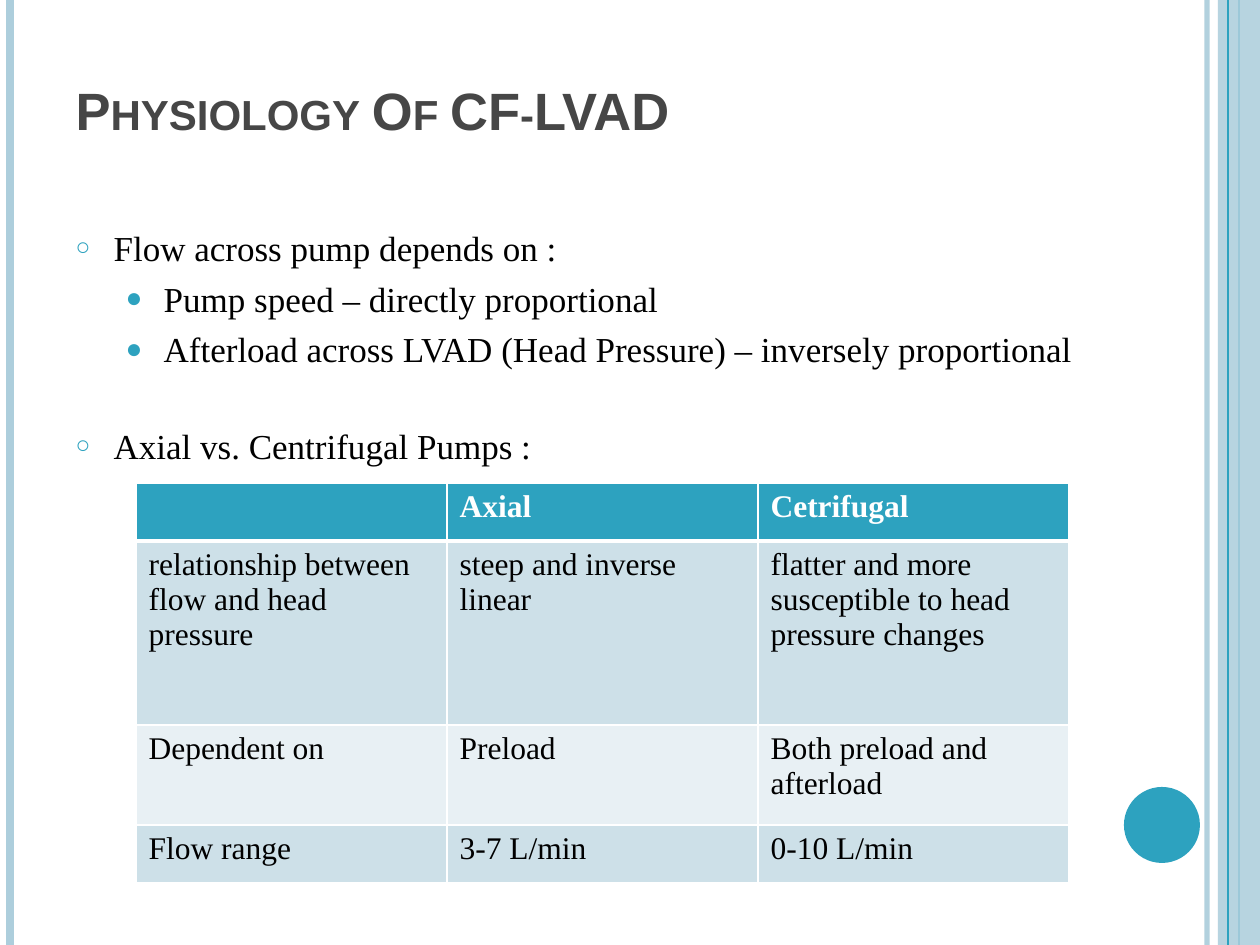
from dataclasses import dataclass
from pptx import Presentation
from pptx.dml.color import RGBColor as RGB
from pptx.enum.shapes import MSO_CONNECTOR as Conn, MSO_SHAPE as Shape
from pptx.enum.text import MSO_ANCHOR as Anchor, MSO_AUTO_SIZE as Fit, PP_ALIGN as Align
from pptx.oxml.ns import qn
from pptx.util import Emu, Pt
from lxml.etree import SubElement as Sub

WIDE, HIGH = 1260, 945


@dataclass(frozen=True)
class Theme:
    teal: str = "2DA2BF"
    pale: str = "ADCEDC"
    band: str = "CDE0E8"
    light: str = "E8F0F4"
    white: str = "FFFFFF"
    ink: str = "000000"
    grey: str = "464646"
    sans: str = "Arial"
    serif: str = "Times New Roman"
    head: int = 30
    text: int = 20
    cell: int = 18


LOOK = Theme()

# Level, space before in points, text
LIST = [
    (0, 6, "Flow across pump depends on :"),
    (1, 5, "Pump speed – directly proportional"),
    (1, 5, "Afterload across LVAD (Head Pressure) – inversely proportional"),
    (0, 31, "Axial vs. Centrifugal Pumps :"),
]
# Per level: bullet, its size in percent, left indent in px
MARKS = [("○", 70, 38), ("●", 80, 88)]
HANG = 38

GRID = [
    ["", "Axial", "Cetrifugal"],
    ["relationship between flow and head pressure", "steep and inverse linear",
     "flatter and more susceptible to head pressure changes"],
    ["Dependent on", "Preload", "Both preload and afterload"],
    ["Flow range", "3-7 L/min", "0-10 L/min"],
]
ROWS = [58, 184, 100, 58]
COL = 311


def px(n):
    return Emu(round(n * 914400 / 126))


def place(item, x, y, w, h):
    item.left, item.top, item.width, item.height = map(px, (x, y, w, h))


def style(par, face, size, color, bold=False):
    for run in par.runs:
        font = run.font
        font.name, font.size, font.bold = face, Pt(size), bold
        font.color.rgb = RGB.from_string(color)


def fade(item, pct):
    for clr in item._element.spPr.iter(qn("a:srgbClr")):
        Sub(clr, qn("a:alpha"), val=str(pct * 1000))


def rule(slide, x, color, width, pct=100):
    line = slide.shapes.add_connector(Conn.STRAIGHT, px(x), 0, px(x), px(HIGH))
    line.line.color.rgb = RGB.from_string(color)
    line.line.width = Pt(width)
    Sub(line._element.spPr, qn("a:effectLst"))
    if pct < 100:
        fade(line, pct)


def block(slide, kind, box, color, pct=100):
    item = slide.shapes.add_shape(kind, *map(px, box))
    item.shadow.inherit = False
    item.fill.solid()
    item.fill.fore_color.rgb = RGB.from_string(color)
    item.line.fill.background()
    if pct < 100:
        fade(item, pct)


def decor(slide):
    rule(slide, 1207, LOOK.pale, 3, 93)
    rule(slide, 10, LOOK.pale, 4.5)
    rule(slide, 1239, LOOK.teal, 1.5)
    block(slide, Shape.RECTANGLE, (1218, 0, 42, HIGH), LOOK.pale, 87)
    rule(slide, 1228, LOOK.teal, 0.75)
    block(slide, Shape.OVAL, (1124, 787, 76, 76), LOOK.teal)


def title(slide, text):
    item = slide.shapes.title
    place(item, 63, -10, 1029, 157)
    frame = item.text_frame
    frame.text = text
    frame.auto_size, frame.vertical_anchor = Fit.NONE, Anchor.BOTTOM
    par = frame.paragraphs[0]
    par.alignment = Align.LEFT
    style(par, LOOK.sans, LOOK.head, LOOK.grey, True)
    par.runs[0].font._element.set("cap", "small")


def bullet(par, level):
    mark, size, left = MARKS[level]
    props = par._p.get_or_add_pPr()
    props.set("marL", str(px(left)))
    props.set("indent", str(-px(HANG)))
    Sub(Sub(props, qn("a:buClr")), qn("a:srgbClr"), val=LOOK.teal)
    Sub(props, qn("a:buSzPct"), val=str(size * 1000))
    Sub(props, qn("a:buFont"), typeface=LOOK.sans)
    Sub(props, qn("a:buChar"), char=mark)


def body(slide):
    item = slide.placeholders[1]
    place(item, 63, 220, 1029, 672)
    frame = item.text_frame
    frame.text = "\n".join(text for _, _, text in LIST)
    frame.auto_size = Fit.NONE
    for par, (level, gap, _) in zip(frame.paragraphs, LIST):
        par.level, par.space_before = level, Pt(gap)
        bullet(par, level)
        style(par, LOOK.serif, LOOK.text, LOOK.ink)


def border(cell, row):
    props = cell._tc.get_or_add_tcPr()
    heavy = {(0, "B"), (1, "T")}
    for side in "LRTB":
        width = Pt(3 if (row, side) in heavy else 1)
        line = Sub(props, qn("a:ln" + side), w=str(width))
        Sub(Sub(line, qn("a:solidFill")), qn("a:srgbClr"), val=LOOK.white)


def table(slide):
    cols = len(GRID[0])
    grid = slide.shapes.add_table(len(GRID), cols, px(136), px(483),
                                  px(COL * cols), px(sum(ROWS))).table
    for col in grid.columns:
        col.width = px(COL)
    for r, (row, high) in enumerate(zip(GRID, ROWS)):
        grid.rows[r].height = px(high)
        top = r == 0
        fill = LOOK.teal if top else LOOK.band if r % 2 else LOOK.light
        for c, text in enumerate(row):
            cell = grid.cell(r, c)
            border(cell, r)
            cell.fill.solid()
            cell.fill.fore_color.rgb = RGB.from_string(fill)
            if text:
                cell.text_frame.text = text
                style(cell.text_frame.paragraphs[0], LOOK.serif, LOOK.cell,
                      LOOK.white if top else LOOK.ink, top)


def main():
    deck = Presentation()
    deck.slide_width, deck.slide_height = px(WIDE), px(HIGH)
    slide = deck.slides.add_slide(deck.slide_layouts[1])
    decor(slide)
    title(slide, "Physiology Of CF-LVAD")
    body(slide)
    table(slide)
    deck.save("out.pptx")


if __name__ == "__main__":
    main()
